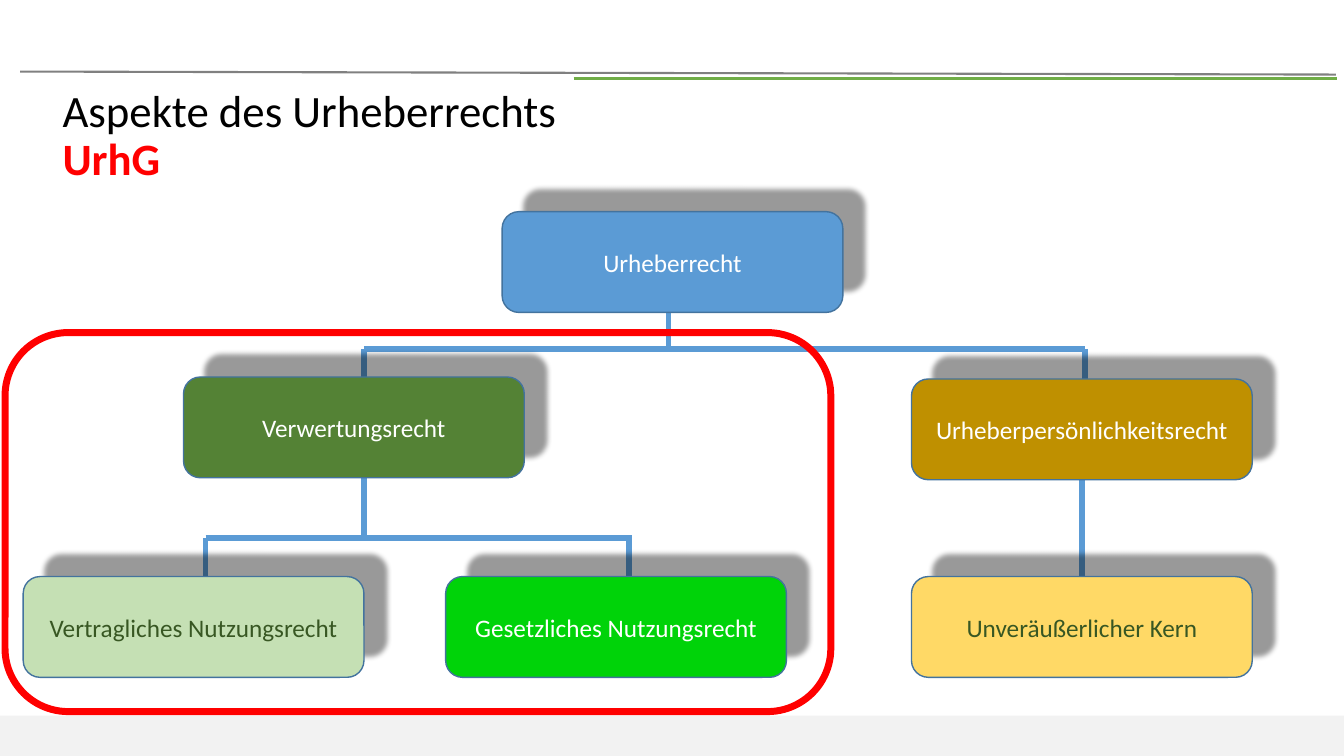
from collections import namedtuple
from lxml import etree
from pptx import Presentation, util as u
from pptx.dml import color
from pptx.enum import shapes, text
from pptx.oxml import ns

Box = namedtuple("Box", "left top width height")
CELL = 0.1
NODE_WIDTH, NODE_HEIGHT = 33.8, 10
BLUE = "5B9BD5"
NODES = {
    "Urheberrecht": (49.8, 0, BLUE, "FFFFFF"),
    "Urheberpersönlichkeitsrecht": (90.4, 16.6, "BF9000", "FFFFFF"),
    "Verwertungsrecht": (18.2, 16.4, "548235", "FFFFFF"),
    "Vertragliches Nutzungsrecht": (2.3, 36.2, "C5E0B4", "385723"),
    "Gesetzliches Nutzungsrecht": (44.2, 36.2, "00D309", "FFFFFF"),
    "Unveräußerlicher Kern": (90.4, 36.2, "FFD966", "385723"),
}
UPPER_BAR, LOWER_BAR = 13.6, 32.4
BRANCHES = [
    (36.1, UPPER_BAR, 107.6, UPPER_BAR),
    (20.4, LOWER_BAR, 62.7, LOWER_BAR),
    (20.4, LOWER_BAR, 20.4, 36.2),
    (62.4, LOWER_BAR, 62.4, 36.2),
    (36.1, UPPER_BAR, 36.1, 16.4),
    (107.6, UPPER_BAR, 107.6, 16.6),
    (36.1, 26.4, 36.1, LOWER_BAR),
    (66.3, 7.6, 66.3, UPPER_BAR),
]


def rgb(value):
    """Turn a hex string into a colour."""
    return color.RGBColor.from_string(value)


def at(box, column, row):
    """Give the slide position of a grid point inside a box."""
    return u.Inches(box.left + column * CELL), u.Inches(box.top + row * CELL)


def add_line(slide, box, ends, shade, width):
    """Draw a plain line between two grid points of a box."""
    line = slide.shapes.add_connector(
        shapes.MSO_CONNECTOR.STRAIGHT, *at(box, *ends[:2]), *at(box, *ends[2:]))
    line.line.color.rgb = rgb(shade)
    line.line.width = u.Pt(width)
    etree.SubElement(line._element.spPr, ns.qn("a:effectLst"))
    return line


def add_panel(slide, box, area, kind, fill=None, outline=None, width=1):
    """Draw a panel covering a grid area of a box."""
    panel = slide.shapes.add_shape(
        kind, *at(box, *area[:2]), *(u.Inches(size * CELL) for size in area[2:]))
    panel.shadow.inherit = False
    if fill:
        panel.fill.solid()
        panel.fill.fore_color.rgb = rgb(fill)
    else:
        panel.fill.background()
    if outline:
        panel.line.color.rgb = rgb(outline)
        panel.line.width = u.Pt(width)
    else:
        panel.line.fill.background()
    return panel


def cast_shadow(panel):
    """Give a panel a soft shadow to its upper right."""
    effects = panel._element.spPr.find(ns.qn("a:effectLst"))
    shadow = etree.SubElement(
        effects, ns.qn("a:outerShdw"), blurRad=str(u.Pt(4)), dist=str(u.Pt(22)),
        dir=str(315 * 60000), algn="ctr", rotWithShape="0")
    black = etree.SubElement(shadow, ns.qn("a:srgbClr"), val="000000")
    etree.SubElement(black, ns.qn("a:alpha"), val="40000")


def add_frame(slide, header, footer):
    """Draw the header rules and the footer band."""
    add_panel(slide, footer, (0, 0, footer.width / CELL, footer.height / CELL),
              shapes.MSO_SHAPE.RECTANGLE, "F2F2F2")
    add_line(slide, header, (2, 0.1, 132.5, 0.4), "808080", 1.5)
    add_line(slide, header, (56.9, 0.8, 132.6, 0.8), "70AD47", 2.25)


def add_title(slide, box):
    """Fill the title placeholder with its two lines."""
    title = slide.shapes.title
    title.left, title.top, title.width, title.height = map(u.Inches, box)
    frame = title.text_frame
    frame.auto_size = text.MSO_AUTO_SIZE.NONE
    frame.vertical_anchor = text.MSO_ANCHOR.MIDDLE
    heading = frame.paragraphs[0]
    heading.alignment = text.PP_ALIGN.LEFT
    heading.line_spacing = 0.9
    heading.font.size = u.Pt(32)
    heading.font.name = "Calibri"
    topic = heading.add_run()
    topic.text = "Aspekte des Urheberrechts"
    topic.font.color.rgb = rgb("000000")
    heading.add_line_break()
    law = heading.add_run()
    law.text = "UrhG"
    law.font.bold = True
    law.font.color.rgb = rgb("FF0000")


def add_node(slide, box, label, column, row, fill, ink):
    """Draw one labelled node of the tree."""
    node = add_panel(slide, box, (column, row, NODE_WIDTH, NODE_HEIGHT),
                     shapes.MSO_SHAPE.ROUNDED_RECTANGLE, fill, "43739E")
    cast_shadow(node)
    frame = node.text_frame
    frame.word_wrap = True
    frame.vertical_anchor = text.MSO_ANCHOR.MIDDLE
    caption = frame.paragraphs[0]
    caption.text = label
    caption.alignment = text.PP_ALIGN.CENTER
    caption.font.size = u.Pt(18)
    caption.font.name = "Calibri"
    caption.font.color.rgb = rgb(ink)
    return node


def add_tree(slide, box):
    """Draw the tree of rights with its branches behind and the highlight on top."""
    nodes = {label: add_node(slide, box, label, *style) for label, style in NODES.items()}
    branches = [add_line(slide, box, ends, BLUE, 4) for ends in BRANCHES]
    core_branch = add_line(slide, box, (107.3, 26.6, 107.3, 36.2), BLUE, 4)
    core_branch.begin_connect(nodes["Urheberpersönlichkeitsrecht"], 2)
    core_branch.end_connect(nodes["Unveräußerlicher Kern"], 0)
    for branch in branches + [core_branch]:
        nodes["Urheberrecht"]._element.addprevious(branch._element)
    add_panel(slide, box, (0.5, 12, 81.9, 37.6),
              shapes.MSO_SHAPE.ROUNDED_RECTANGLE, None, "FF0000", 5)


def main():
    """Build and save the slide."""
    deck = Presentation()
    deck.slide_width, deck.slide_height = u.Inches(13.33), u.Inches(7.5)
    slide = deck.slides.add_slide(deck.slide_layouts[5])
    add_frame(slide, Box(0, 0.7, 13.33, 0.1), Box(0, 7.1, 13.33, 0.4))
    add_title(slide, Box(0.52, 0.76, 11.5, 1.2))
    add_tree(slide, Box(0, 2.1, 13.33, 5))
    deck.save("out.pptx")


if __name__ == "__main__":
    main()
